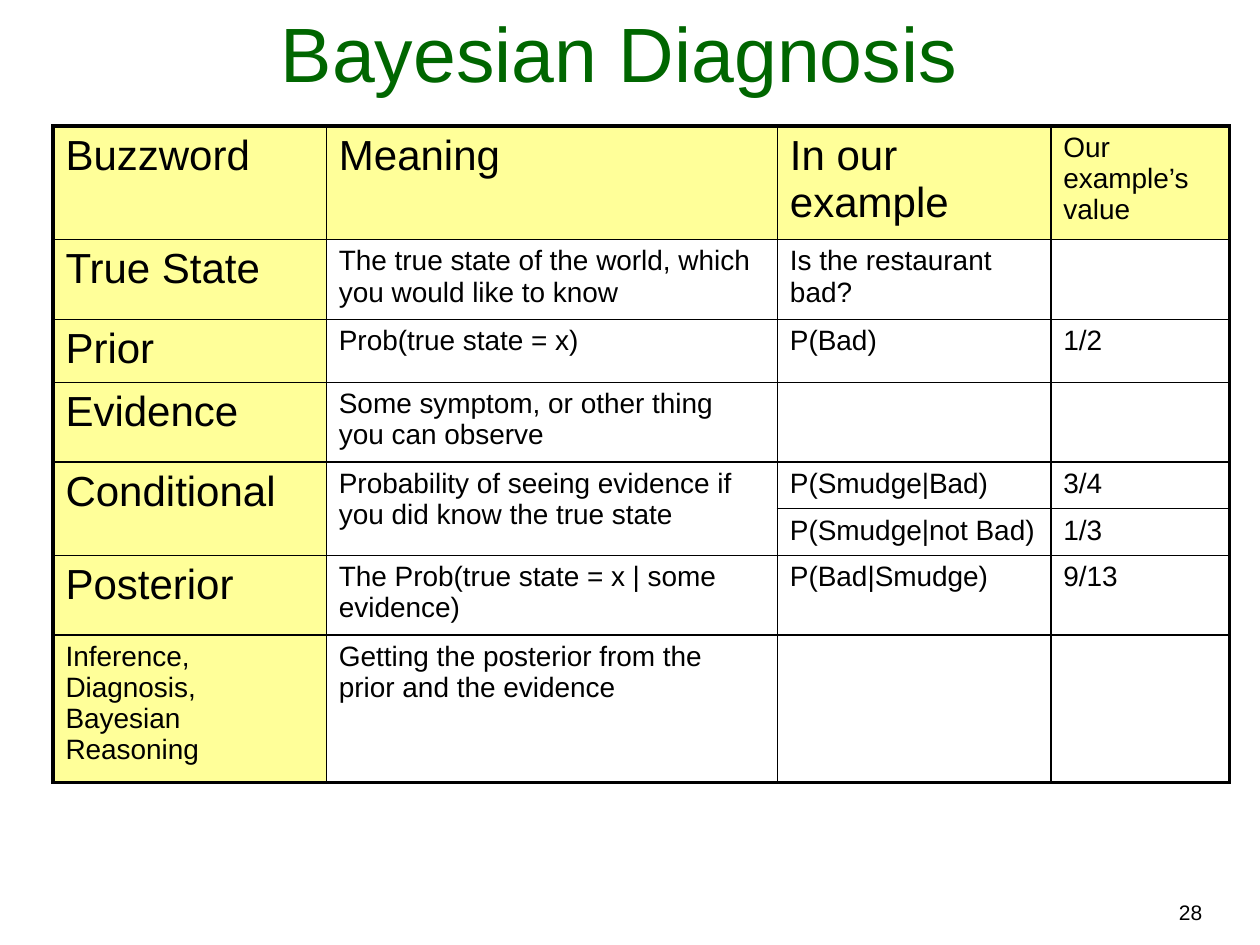
from pptx import Presentation
from pptx.dml.color import RGBColor
from pptx.enum.text import MSO_ANCHOR, PP_ALIGN
from pptx.oxml.ns import qn
from pptx.util import Inches, Pt
from lxml.etree import SubElement

TITLE = "Bayesian Diagnosis"
PAGE = "28"
ROWS = [
    ("Buzzword", "Meaning", "In our example", "Our example’s value"),
    ("True State", "The true state of the world, which you would like to know",
     "Is the restaurant bad?", ""),
    ("Prior", "Prob(true state = x)", "P(Bad)", "1/2"),
    ("Evidence", "Some symptom, or other thing you can observe", "", ""),
    ("Conditional", "Probability of seeing evidence if you did know the true state",
     "P(Smudge|Bad)", "3/4"),
    ("", "", "P(Smudge|not Bad)", "1/3"),
    ("Posterior", "The Prob(true state = x | some evidence)", "P(Bad|Smudge)", "9/13"),
    ("Inference, Diagnosis, Bayesian Reasoning",
     "Getting the posterior from the prior and the evidence", "", ""),
]
COL_WIDTHS = [2.17, 3.58, 2.17, 1.42]
ROW_HEIGHTS = [0.9, 0.63, 0.5, 0.63, 0.37, 0.37, 0.63, 1.17]
CONDITIONAL_ROW = 4

THEME = {
    "font": "Arial",
    "text": RGBColor.from_string("000000"),
    "title": RGBColor.from_string("006600"),
    "header": RGBColor.from_string("FFFF99"),
    "border": "000000",
    "title_size": 44, "head_size": 24, "body_size": 16, "page_size": 12,
    "outer": 2.25, "inner": 1,
}


def style(p, size, color):
    p.font.name = THEME["font"]
    p.font.size = Pt(size)
    p.font.color.rgb = color


def add_text(s, box, text, size, color, align, anchor):
    tf = s.shapes.add_textbox(*(Inches(v) for v in box)).text_frame
    tf.word_wrap = True
    tf.vertical_anchor = anchor
    p = tf.paragraphs[0]
    p.text = text
    p.alignment = align
    style(p, size, color)


def set_borders(cell, outer_edges):
    tc_pr = cell._tc.get_or_add_tcPr()
    for edge, is_outer in outer_edges.items():
        width = THEME["outer"] if is_outer else THEME["inner"]
        ln = SubElement(tc_pr, qn(f"a:ln{edge}"), w=str(Pt(width)))
        fill = SubElement(ln, qn("a:solidFill"))
        SubElement(fill, qn("a:srgbClr"), val=THEME["border"])


def add_glossary(s):
    last_row, last_col = len(ROWS) - 1, len(COL_WIDTHS) - 1
    table = s.shapes.add_table(
        len(ROWS), len(COL_WIDTHS), Inches(0.42), Inches(1),
        Inches(sum(COL_WIDTHS)), Inches(sum(ROW_HEIGHTS))).table
    table.first_row = table.horz_banding = False
    for col, width in zip(table.columns, COL_WIDTHS):
        col.width = Inches(width)
    for row, height in zip(table.rows, ROW_HEIGHTS):
        row.height = Inches(height)
    for j in (0, 1):
        table.cell(CONDITIONAL_ROW, j).merge(table.cell(CONDITIONAL_ROW + 1, j))

    for i, row in enumerate(ROWS):
        for j, text in enumerate(row):
            cell = table.cell(i, j)
            if cell.is_spanned:
                continue
            is_header = i == 0 or j == 0
            is_small = not is_header or (i, j) in ((0, last_col), (last_row, 0))
            p = cell.text_frame.paragraphs[0]
            p.text = text
            style(p, THEME["body_size" if is_small else "head_size"], THEME["text"])
            set_borders(cell, {"L": j == 0, "R": j == last_col,
                               "T": i == 0, "B": i == last_row})
            if is_header:
                cell.fill.solid()
                cell.fill.fore_color.rgb = THEME["header"]
            else:
                cell.fill.background()


def main():
    prs = Presentation()
    prs.slide_width, prs.slide_height = Inches(10), Inches(7.5)
    s = prs.slides.add_slide(prs.slide_layouts[6])
    add_text(s, (5.72, 7.09, 3.92, 0.3), PAGE, THEME["page_size"], THEME["text"],
             PP_ALIGN.RIGHT, MSO_ANCHOR.TOP)
    add_text(s, (0.25, 0.08, 9.33, 0.75), TITLE, THEME["title_size"], THEME["title"],
             PP_ALIGN.CENTER, MSO_ANCHOR.BOTTOM)
    add_glossary(s)
    prs.save("out.pptx")


if __name__ == "__main__":
    main()
